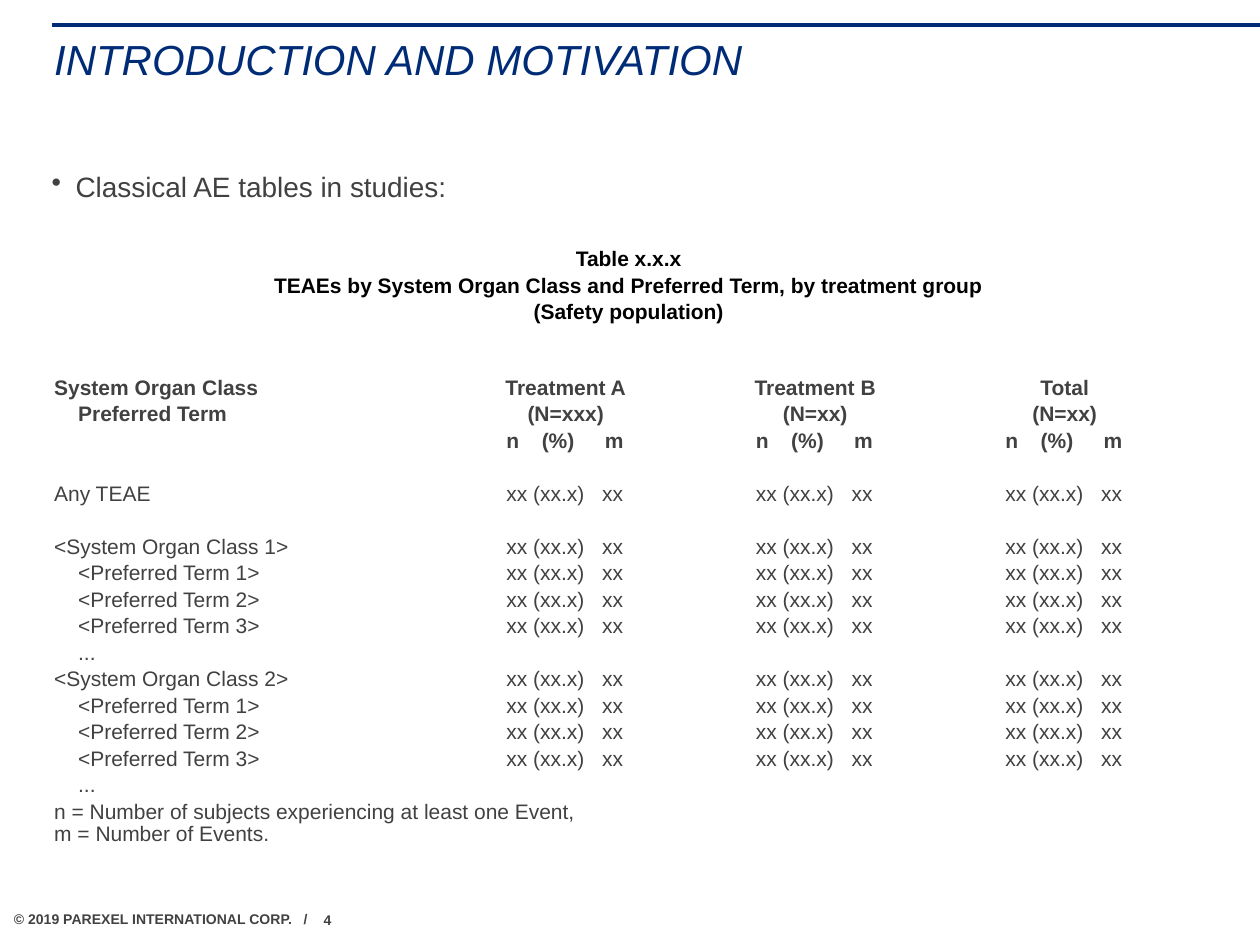
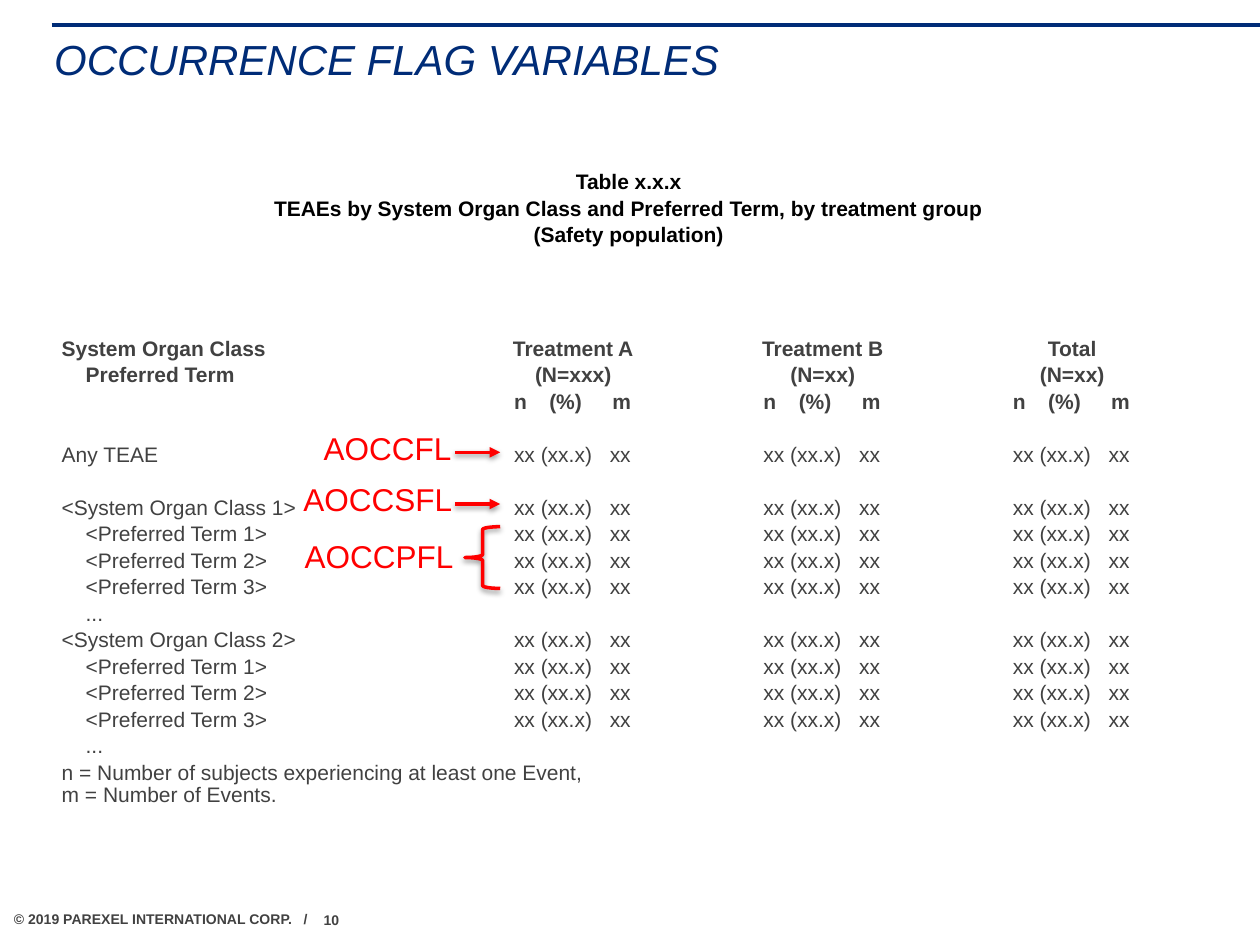
import copy
from dataclasses import dataclass

import pptx
import pptx.dml.color
import pptx.enum.shapes
import pptx.enum.text
import pptx.oxml
import pptx.oxml.ns
import pptx.util
from pptx.util import Inches

COLORS = {"navy": "002C77", "gray": "414141", "black": "000000", "white": "FFFFFF", "red": "FF0000"}
FONT = "Arial"
ALIGN = pptx.enum.text.PP_ALIGN
ANCHOR = pptx.enum.text.MSO_ANCHOR

TABLE_HEADING = "Table x.x.x\vTEAEs by System Organ Class and Preferred Term, by treatment group\v(Safety population)"
FOOTNOTE = "n = Number of subjects experiencing at least one Event,\vm = Number of Events."
COLUMN_WIDTHS = (3.08, 1.98, 1.98, 1.98)
ROW_HEIGHT = 0.2
CELL_MARGIN = 0.01
TERM_INDENT = 0.2
COUNT_INDENT = 0.52
COUNT_HEADER = "n\t(%)\tm"
COUNT_HEADER_TABS = (0.28, 0.78)
COUNTS = "xx (xx.x)\txx"
COUNTS_TABS = (0.76,)


@dataclass(frozen=True)
class TextStyle:
    size: int
    color: str
    bold: bool = False
    italic: bool = False
    align: ALIGN = ALIGN.LEFT
    line_spacing: float | None = None


@dataclass(frozen=True)
class TableRow:
    label: str = ""
    values: tuple[str, ...] = ("", "", "")
    indented: bool = False
    bold: bool = False
    tabs: tuple[float, ...] = ()


@dataclass(frozen=True)
class FlagLabel:
    text: str
    left: float
    top: float
    width: float
    arrow_y: float | None = None


TITLE = TextStyle(24, "navy", italic=True, line_spacing=1.05)
BULLET = TextStyle(16, "gray", line_spacing=1.05)
HEADING = TextStyle(12, "black", bold=True, align=ALIGN.CENTER, line_spacing=1.05)
FOOTER = TextStyle(8, "gray", bold=True)
FLAG = TextStyle(18, "red")
NOTE = TextStyle(12, "gray", line_spacing=0.95)


def count_row(label: str, indented: bool = False) -> TableRow:
    return TableRow(label, (COUNTS,) * 3, indented, tabs=COUNTS_TABS)


def organ_class_rows(number: int) -> list[TableRow]:
    terms = [count_row(f"<Preferred Term {term}>", indented=True) for term in range(1, 4)]
    return [count_row(f"<System Organ Class {number}>"), *terms, TableRow("...", indented=True)]


TABLE_ROWS = [
    TableRow("System Organ Class", ("Treatment A", "Treatment B", "Total"), bold=True),
    TableRow("Preferred Term", ("(N=xxx)", "(N=xx)", "(N=xx)"), indented=True, bold=True),
    TableRow("", (COUNT_HEADER,) * 3, bold=True, tabs=COUNT_HEADER_TABS),
    TableRow(),
    count_row("Any TEAE"),
    TableRow(),
    *organ_class_rows(1),
    *organ_class_rows(2),
]

FLAGS = [
    FlagLabel("AOCCFL", 2.47, 3.36, 1.25, 3.59),
    FlagLabel("AOCCSFL", 2.31, 3.76, 1.41, 4),
    FlagLabel("AOCCPFL", 2.32, 4.21, 1.41),
]


def rgb(name: str) -> pptx.dml.color.RGBColor:
    return pptx.dml.color.RGBColor.from_string(COLORS[name])


def add_xml(parent, tag: str, **attributes):
    element = pptx.oxml.parse_xml(f'<a:{tag} {pptx.oxml.ns.nsdecls("a")}/>')
    for name, value in attributes.items():
        element.set(name, str(value))
    parent.append(element)
    return element


def add_tabs(paragraph, positions: tuple[float, ...]) -> None:
    tab_list = add_xml(paragraph._p.get_or_add_pPr(), "tabLst")
    for position in positions:
        add_xml(tab_list, "tab", pos=Inches(position), algn="l")


def write(paragraph, text: str, style: TextStyle) -> None:
    paragraph.text = text
    paragraph.alignment = style.align
    if style.line_spacing:
        paragraph.line_spacing = style.line_spacing
    for run in paragraph.runs:
        run.font.name = FONT
        run.font.size = pptx.util.Pt(style.size)
        run.font.bold = style.bold
        run.font.italic = style.italic
        run.font.color.rgb = rgb(style.color)
    for line_break in paragraph._p.findall(pptx.oxml.ns.qn("a:br")):
        line_break.insert(0, copy.deepcopy(paragraph.runs[0]._r.rPr))
    if not text:
        add_xml(paragraph._p, "endParaRPr", sz=style.size * 100)


def add_text_box(slide, left: float, top: float, width: float, height: float,
                 margins: tuple[float, float, float, float] = (0.1, 0.05, 0.1, 0.05)):
    text_frame = slide.shapes.add_textbox(Inches(left), Inches(top), Inches(width), Inches(height)).text_frame
    text_frame.word_wrap = True
    text_frame.margin_left, text_frame.margin_top, text_frame.margin_right, text_frame.margin_bottom = map(
        Inches, margins)
    return text_frame


def add_line(slide, left: float, right: float, y: float, color: str):
    connector = slide.shapes.add_connector(
        pptx.enum.shapes.MSO_CONNECTOR.STRAIGHT, Inches(left), Inches(y), Inches(right), Inches(y))
    connector.line.color.rgb = rgb(color)
    connector.line.width = pptx.util.Pt(2)
    return connector


def add_shadow(shape) -> None:
    effects = add_xml(shape._element.spPr, "effectLst")
    shadow = add_xml(effects, "outerShdw", blurRad=pptx.util.Pt(3.1), dist=pptx.util.Pt(1.6),
                     dir=5400000, rotWithShape=0)
    add_xml(add_xml(shadow, "srgbClr", val=COLORS["black"]), "alpha", val=38000)


def add_slide(presentation, title: str, number: int):
    slide = presentation.slides.add_slide(presentation.slide_layouts[6])
    footer = add_text_box(slide, 0.11, 7.23, 4.65, 0.14, (0, 0, 0.1, 0)).paragraphs[0]
    add_tabs(footer, (2.3,))
    write(footer, "© 2019 PAREXEL INTERNATIONAL CORP.\t/", FOOTER)
    rule = add_line(slide, 0.41, 10, 0.2, "navy")
    add_xml(rule._element.spPr, "effectLst")
    page = add_text_box(slide, 2.47, 7.1, 0.4, 0.4)
    page.vertical_anchor = ANCHOR.MIDDLE
    write(page.paragraphs[0], str(number), FOOTER)
    write(add_text_box(slide, 0.43, 0.23, 9.13, 0.82, (0, 0.02, 0.1, 0)).paragraphs[0], title, TITLE)
    return slide


def add_body(slide, bullet: str | None = None) -> None:
    body = add_text_box(slide, 0.41, 1.33, 9.16, 5.38, (0, 0, 0, 0))
    heading = body.paragraphs[0]
    if bullet:
        paragraph = body.paragraphs[0]
        properties = paragraph._p.get_or_add_pPr()
        properties.set("marL", str(Inches(0.19)))
        properties.set("indent", str(-Inches(0.19)))
        add_xml(properties, "buChar", char="•")
        write(paragraph, bullet, BULLET)
        paragraph.space_after = pptx.util.Pt(12)
        heading = body.add_paragraph()
        heading.space_before = pptx.util.Pt(12)
    write(heading, TABLE_HEADING, HEADING)
    heading.space_after = pptx.util.Pt(12)


def format_cell(cell, text: str, style: TextStyle, indent: float = CELL_MARGIN,
                tabs: tuple[float, ...] = ()) -> None:
    cell.fill.background()
    cell.vertical_anchor = ANCHOR.MIDDLE
    cell.margin_left = Inches(indent)
    cell.margin_top = cell.margin_right = Inches(CELL_MARGIN)
    cell.margin_bottom = 0
    properties = cell._tc.get_or_add_tcPr()
    for position, side in enumerate(("lnL", "lnR", "lnT", "lnB")):
        border = add_xml(properties, side, w=pptx.util.Pt(1))
        add_xml(add_xml(border, "solidFill"), "srgbClr", val=COLORS["white"])
        properties.insert(position, border)
    paragraph = cell.text_frame.paragraphs[0]
    if tabs:
        add_tabs(paragraph, tabs)
    write(paragraph, text, style)


def add_event_table(slide, left: float, top: float) -> None:
    row_count = len(TABLE_ROWS) + 1
    table = slide.shapes.add_table(
        row_count, len(COLUMN_WIDTHS), Inches(left), Inches(top),
        Inches(sum(COLUMN_WIDTHS)), Inches(ROW_HEIGHT * (row_count + 1))).table
    table.first_row = table.horz_banding = False
    for column, width in zip(table.columns, COLUMN_WIDTHS):
        column.width = Inches(width)
    for index, row in enumerate(TABLE_ROWS):
        table.rows[index].height = Inches(ROW_HEIGHT)
        label_style = TextStyle(12, "gray", bold=row.bold, align=ALIGN.JUSTIFY)
        format_cell(table.cell(index, 0), row.label, label_style, TERM_INDENT if row.indented else CELL_MARGIN)
        value_style = TextStyle(12, "gray", bold=row.bold, align=ALIGN.LEFT if row.tabs else ALIGN.CENTER)
        for column_index, value in enumerate(row.values, start=1):
            format_cell(table.cell(index, column_index), value, value_style,
                        COUNT_INDENT if row.tabs else CELL_MARGIN, row.tabs)
    last = row_count - 1
    table.rows[last].height = Inches(2 * ROW_HEIGHT)
    for column_index in range(len(COLUMN_WIDTHS)):
        format_cell(table.cell(last, column_index), "" if column_index else FOOTNOTE, NOTE)
    table.cell(last, 0).merge(table.cell(last, len(COLUMN_WIDTHS) - 1))


def add_flag(slide, flag: FlagLabel) -> None:
    text_frame = add_text_box(slide, flag.left, flag.top, flag.width, 0.4)
    write(text_frame.paragraphs[0], flag.text, FLAG)
    if flag.arrow_y is not None:
        arrow = add_line(slide, 3.61, 3.97, flag.arrow_y, "red")
        add_xml(arrow.line._get_or_add_ln(), "tailEnd", type="triangle")
        add_shadow(arrow)


def add_term_brace(slide) -> None:
    brace = slide.shapes.add_shape(
        pptx.enum.shapes.MSO_SHAPE.LEFT_BRACE, Inches(3.69), Inches(4.18), Inches(0.28), Inches(0.49))
    brace.fill.background()
    brace.line.color.rgb = rgb("red")
    brace.line.width = pptx.util.Pt(2)
    add_shadow(brace)


def main() -> None:
    presentation = pptx.Presentation()
    presentation.slide_width = Inches(10)
    presentation.slide_height = Inches(7.5)

    introduction = add_slide(presentation, "INTRODUCTION AND MOTIVATION", 4)
    add_body(introduction, "Classical AE tables in studies:")
    add_event_table(introduction, 0.42, 2.97)

    occurrence_flags = add_slide(presentation, "OCCURRENCE FLAG VARIABLES", 10)
    add_body(occurrence_flags)
    add_event_table(occurrence_flags, 0.48, 2.66)
    for flag in FLAGS:
        add_flag(occurrence_flags, flag)
    add_term_brace(occurrence_flags)

    presentation.save("out.pptx")


if __name__ == "__main__":
    main()
